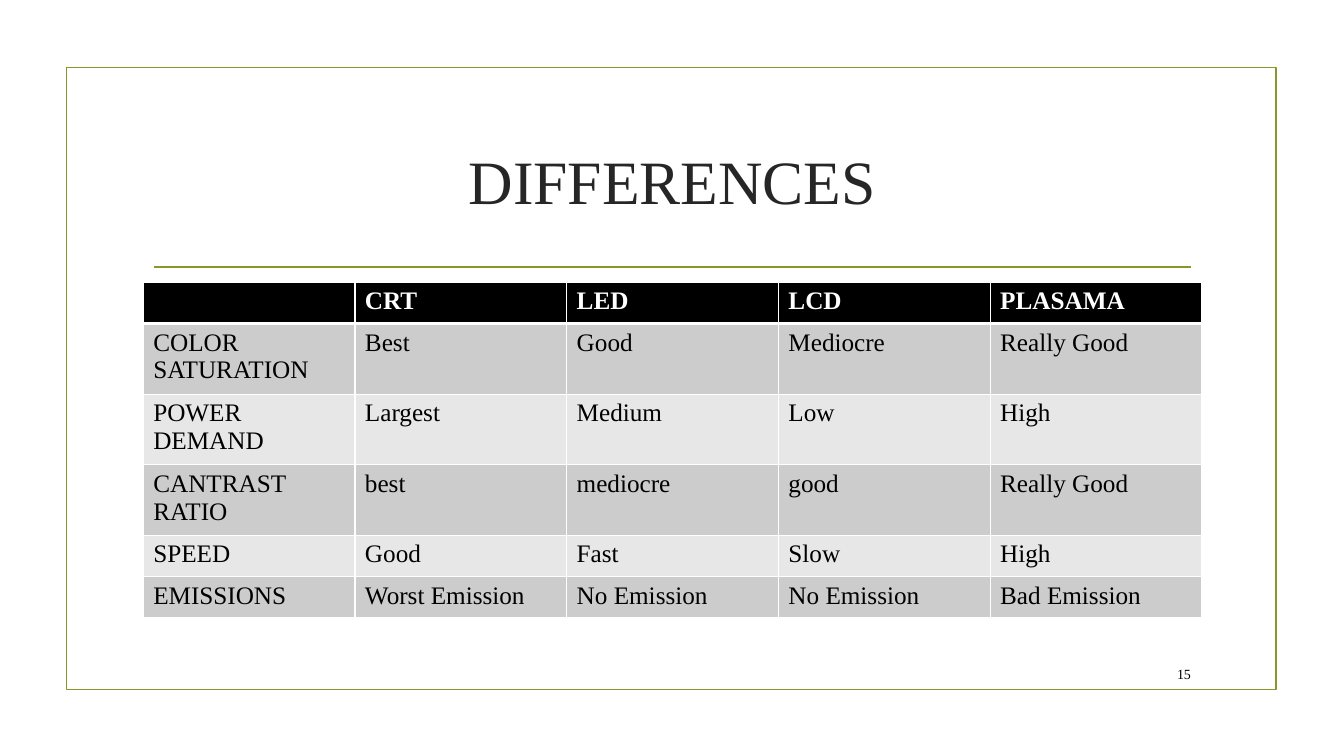
from lxml import etree
from pptx import Presentation
from pptx import util as u
from pptx.dml.color import RGBColor
from pptx.enum import shapes, text
from pptx.oxml.ns import qn

TITLE = "DIFFERENCES"
PAGE = "15"
ROWS = [
    ["", "CRT", "LED", "LCD", "PLASAMA"],
    ["COLOR SATURATION", "Best", "Good", "Mediocre", "Really Good"],
    ["POWER DEMAND", "Largest", "Medium", "Low", "High"],
    ["CANTRAST RATIO", "best", "mediocre", "good", "Really Good"],
    ["SPEED", "Good", "Fast", "Slow", "High"],
    ["EMISSIONS", "Worst Emission", "No Emission", "No Emission", "Bad Emission"],
]

FONT = "Times New Roman"
BLACK = RGBColor(0x00, 0x00, 0x00)
WHITE = RGBColor(0xFF, 0xFF, 0xFF)
CHARCOAL = RGBColor(0x26, 0x26, 0x26)
OLIVE = RGBColor(0x83, 0x99, 0x2A)
DARK_BAND = RGBColor(0xCC, 0xCC, 0xCC)
LIGHT_BAND = RGBColor(0xE7, 0xE7, 0xE7)

LEFT, TABLE_TOP, WIDTH = 1.42, 2.8, 10.5
ROW_HEIGHT = 0.41


def add_run(p, content, size, color, bold=False):
    r = p.add_run()
    r.text = content
    r.font.name = FONT
    r.font.size = u.Pt(size)
    r.font.bold = bold
    r.font.color.rgb = color


def add_label(s, box, content, size, color, align):
    tf = s.shapes.add_textbox(*map(u.Inches, box)).text_frame
    tf.word_wrap = True
    tf.vertical_anchor = text.MSO_ANCHOR.MIDDLE
    tf.paragraphs[0].alignment = align
    add_run(tf.paragraphs[0], content, size, color)


def set_borders(cell, bottom_width, top_width):
    tc_pr = cell._tc.get_or_add_tcPr()
    widths = {"a:lnL": 1, "a:lnR": 1, "a:lnT": top_width, "a:lnB": bottom_width}
    for i, (tag, width) in enumerate(widths.items()):
        ln = etree.Element(qn(tag), w=str(u.Pt(width)))
        fill = etree.SubElement(ln, qn("a:solidFill"))
        etree.SubElement(fill, qn("a:srgbClr"), val=str(WHITE))
        tc_pr.insert(i, ln)


def add_frame(s):
    sp = s.shapes.add_shape(shapes.MSO_SHAPE.RECTANGLE,
                            *map(u.Inches, (0.66, 0.67, 12, 6.17)))
    sp.shadow.inherit = False
    sp.fill.background()
    sp.line.color.rgb = OLIVE
    sp.line.width = u.Pt(1.25)

    rule = s.shapes.add_connector(shapes.MSO_CONNECTOR.STRAIGHT,
                                  *map(u.Inches, (1.53, 2.65, 11.81, 2.65)))
    rule.line.color.rgb = OLIVE
    rule.line.width = u.Pt(1.25)
    etree.SubElement(rule._element.spPr, qn("a:effectLst"))


def add_comparison(s):
    box = (LEFT, TABLE_TOP, WIDTH, ROW_HEIGHT * len(ROWS))
    table = s.shapes.add_table(len(ROWS), len(ROWS[0]), *map(u.Inches, box)).table
    for column in table.columns:
        column.width = u.Inches(WIDTH / len(ROWS[0]))
    for i, row in enumerate(ROWS):
        table.rows[i].height = u.Inches(ROW_HEIGHT)
        header = i == 0
        band = BLACK if header else DARK_BAND if i % 2 else LIGHT_BAND
        for j, content in enumerate(row):
            cell = table.cell(i, j)
            cell.fill.solid()
            cell.fill.fore_color.rgb = band
            set_borders(cell, 3 if header else 1, 3 if i == 1 else 1)
            if content:
                add_run(cell.text_frame.paragraphs[0], content, 18,
                        WHITE if header else BLACK, header)


def main():
    prs = Presentation()
    prs.slide_width, prs.slide_height = u.Inches(13.33), u.Inches(7.5)
    s = prs.slides.add_slide(prs.slide_layouts[6])
    add_frame(s)
    add_label(s, (LEFT, 1.07, WIDTH, 1.43), TITLE, 44, CHARCOAL, text.PP_ALIGN.CENTER)
    add_comparison(s)
    add_label(s, (11.32, 6.53, 0.59, 0.31), PAGE, 10, BLACK, text.PP_ALIGN.RIGHT)
    prs.save("out.pptx")


if __name__ == "__main__":
    main()
